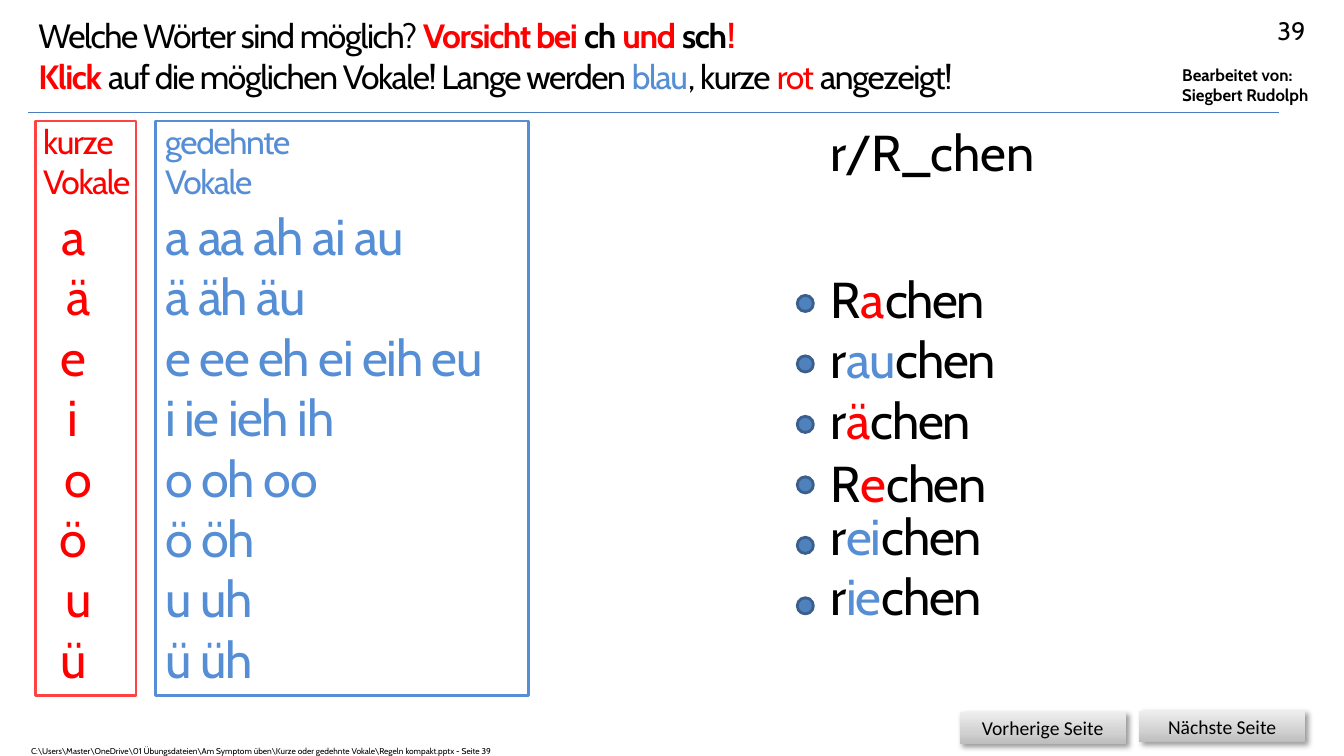
from dataclasses import dataclass
from typing import NamedTuple, Optional, Sequence

from pptx import Presentation
from pptx import util as u
from pptx.dml import color as dml
from pptx.enum import shapes, text
from pptx.oxml import ns, parse_xml


@dataclass(frozen=True)
class Theme:
    font: str = "Cabin"
    button_font: str = "Calibri"
    ink: str = "000000"
    short: str = "FF0000"
    long: str = "558ED5"
    short_frame: str = "FF4343"
    rule: str = "4B7EBC"
    dot: str = "4F81BD"
    dot_edge: str = "3A5F8C"
    button_stops: tuple = ((0, "BDBDBD"), (35, "D1D1D1"), (100, "EEEEEE"))
    vowel_size: float = 36
    heading_size: float = 24
    page_size: float = 18
    button_size: float = 14
    credit_size: float = 12
    footer_size: float = 6


THEME = Theme()


class Box(NamedTuple):
    left: float
    top: float
    width: float
    height: float

    def lengths(self) -> list:
        return [u.Pt(value) for value in self]


class Part(NamedTuple):
    text: str
    color: str = THEME.ink
    bold: bool = False


class Word(NamedTuple):
    onset: str
    vowel: str
    color: str
    nudge: float = 0


class Frame(NamedTuple):
    box: Box
    color: str


class Button(NamedTuple):
    label: str
    box: Box


WORDS = (
    Word("R", "a", THEME.short),
    Word("r", "au", THEME.long),
    Word("r", "ä", THEME.short),
    Word("R", "e", THEME.short, 2.2),
    Word("r", "ei", THEME.long, -3.6),
    Word("r", "ie", THEME.long, -3.6),
)
FRAMES = (
    Frame(Box(25.2, 86.4, 72, 410.4), THEME.short_frame),
    Frame(Box(110.9, 86.4, 266.4, 410.4), THEME.long),
)
BUTTONS = (
    Button("Vorherige Seite", Box(685.4, 508.3, 118.8, 23)),
    Button("Nächste Seite", Box(813.6, 507.6, 118.8, 22.3)),
)
TASK = (
    (Part("Welche Wörter sind möglich? "), Part("Vorsicht bei ", THEME.short, True),
     Part("ch", bold=True), Part(" und ", THEME.short, True),
     Part("sch", bold=True), Part("!", THEME.short, True)),
    (Part("Klick ", THEME.short, True), Part("auf die möglichen Vokale! Lange werden "),
     Part("blau", THEME.long), Part(", kurze "), Part("rot", THEME.short),
     Part(" angezeigt!")),
)
SHORT_VOWELS = ("a ", "ä", "e ", "i ", "o", "ö ", "u", "ü ")
LONG_VOWELS = ("a aa ah ai au", "ä äh äu", "e ee eh ei eih eu", "i ie ieh ih",
               "o oh oo", "ö öh", "u uh", "ü üh")
FILE_LINE = (r"C:\Users\Master\OneDrive\01 Übungsdateien\Am Symptom üben"
             r"\Kurze oder gedehnte Vokale\Regeln kompakt.pptx - Seite 39")
ROW_PITCH = 43.2
FIRST_WORD_TOP = 187.9
FIRST_DOT_TOP = 211


def rgb(value: str) -> dml.RGBColor:
    return dml.RGBColor.from_string(value)


def lines(*texts: str, color: str = THEME.ink, bold: bool = False) -> list:
    return [(Part(line, color, bold),) for line in texts]


def write(holder, paragraphs: Sequence, *, size: float, font: str = THEME.font,
          align=text.PP_ALIGN.LEFT, anchor=text.MSO_ANCHOR.TOP,
          spacing: Optional[float] = None) -> None:
    frame = holder.text_frame
    frame.word_wrap = True
    frame.auto_size = text.MSO_AUTO_SIZE.NONE
    frame.vertical_anchor = anchor
    for number, parts in enumerate(paragraphs):
        paragraph = frame.add_paragraph() if number else frame.paragraphs[0]
        paragraph.alignment = align
        if holder.is_placeholder:
            paragraph.space_before = u.Pt(0)
            properties = paragraph._p.get_or_add_pPr()
            properties.set("marL", "0")
            properties.set("indent", "0")
            properties.append(parse_xml(f"<a:buNone {ns.nsdecls('a')}/>"))
        for part in parts:
            run = paragraph.add_run()
            run.text = part.text
            run.font.name = font
            run.font.size = u.Pt(size)
            run.font.bold = part.bold
            run.font.color.rgb = rgb(part.color)
            if spacing is not None:
                run._r.get_or_add_rPr().set("spc", str(round(spacing * 100)))


def label(slide, box: Box, paragraphs: Sequence, **text_format) -> None:
    write(slide.shapes.add_textbox(*box.lengths()), paragraphs, **text_format)


def fill_placeholder(placeholder, box: Box, paragraphs: Sequence, **text_format) -> None:
    placeholder.left, placeholder.top, placeholder.width, placeholder.height = box.lengths()
    write(placeholder, paragraphs, **text_format)


def outline(slide, kind, box: Box, edge: str, inside: Optional[str] = None) -> None:
    figure = slide.shapes.add_shape(kind, *box.lengths())
    figure.shadow.inherit = False
    figure.line.color.rgb = rgb(edge)
    figure.line.width = u.Pt(2)
    if inside:
        figure.fill.solid()
        figure.fill.fore_color.rgb = rgb(inside)
    else:
        figure.fill.background()


def draw_button(slide, button: Button) -> None:
    key = slide.shapes.add_shape(shapes.MSO_SHAPE.RECTANGLE, *button.box.lengths())
    key.line.fill.background()
    key.shadow.inherit = False
    stops = "".join(f'<a:gs pos="{at * 1000}"><a:srgbClr val="{tone}"/></a:gs>'
                    for at, tone in THEME.button_stops)
    properties = key.element.spPr
    properties.find(ns.qn("a:ln")).addprevious(parse_xml(
        f'<a:gradFill {ns.nsdecls("a")} rotWithShape="1"><a:gsLst>{stops}</a:gsLst>'
        '<a:lin ang="16200000" scaled="0"/></a:gradFill>'))
    properties.find(ns.qn("a:effectLst")).append(parse_xml(
        f'<a:outerShdw {ns.nsdecls("a")} blurRad="{u.Pt(4)}" dist="{u.Pt(3)}" '
        'dir="2700000" algn="tl" rotWithShape="0"><a:srgbClr val="000000">'
        '<a:alpha val="40000"/></a:srgbClr></a:outerShdw>'))
    write(key, lines(button.label), size=THEME.button_size, font=THEME.button_font,
          align=text.PP_ALIGN.CENTER, anchor=text.MSO_ANCHOR.MIDDLE)


def draw_rule(slide) -> None:
    rule = slide.shapes.add_connector(shapes.MSO_CONNECTOR.STRAIGHT, u.Pt(20.2),
                                      u.Pt(80.6), u.Pt(913.7), u.Pt(80.6))
    rule.line.color.rgb = rgb(THEME.rule)
    rule.line.width = u.Pt(0.75)
    rule.element.spPr.append(parse_xml(f"<a:effectLst {ns.nsdecls('a')}/>"))


def draw_word(slide, row: int, word: Word) -> None:
    top = FIRST_WORD_TOP + row * ROW_PITCH + word.nudge
    parts = (Part(word.onset), Part(word.vowel, word.color), Part("chen"))
    label(slide, Box(586.1, top, 180, 51.1), [parts], size=THEME.vowel_size, spacing=-1)
    outline(slide, shapes.MSO_SHAPE.OVAL,
            Box(569.5, FIRST_DOT_TOP + row * ROW_PITCH, 11.5, 11.5),
            THEME.dot_edge, THEME.dot)


def main() -> None:
    deck = Presentation()
    deck.slide_width, deck.slide_height = u.Pt(960), u.Pt(540)
    slide = deck.slides.add_slide(deck.slide_layouts[3])
    task, short_list, long_list = slide.placeholders

    draw_rule(slide)
    fill_placeholder(task, Box(20.2, 7.2, 822.2, 65.5), TASK,
                     size=THEME.heading_size, spacing=-1)
    fill_placeholder(short_list, Box(34.6, 142.6, 42.5, 356.4),
                     lines(*SHORT_VOWELS, color=THEME.short), size=THEME.vowel_size,
                     align=text.PP_ALIGN.CENTER, spacing=-1)
    fill_placeholder(long_list, Box(110.9, 142.6, 280.8, 356.4),
                     lines(*LONG_VOWELS, color=THEME.long),
                     size=THEME.vowel_size, spacing=-1)
    label(slide, Box(23.8, 82.8, 89.3, 65.5), lines("kurze", "Vokale", color=THEME.short),
          size=THEME.heading_size, spacing=-1)
    label(slide, Box(110.9, 82.8, 122.4, 65.5), lines("gedehnte", "Vokale", color=THEME.long),
          size=THEME.heading_size, spacing=-1)
    for frame in FRAMES:
        outline(slide, shapes.MSO_SHAPE.RECTANGLE, frame.box, frame.color)

    label(slide, Box(586.1, 82.8, 180, 51.1), lines("r/R_chen"), size=THEME.vowel_size)
    for row, word in enumerate(WORDS):
        draw_word(slide, row, word)

    label(slide, Box(723.6, 7.2, 216, 28.8), lines("39"), size=THEME.page_size,
          align=text.PP_ALIGN.RIGHT)
    label(slide, Box(837.4, 42.5, 115.2, 36), lines("Bearbeitet von:", "Siegbert Rudolph",
          bold=True), size=THEME.credit_size)
    for button in BUTTONS:
        draw_button(slide, button)
    label(slide, Box(15.1, 529.2, 352.8, 14.4), lines(FILE_LINE), size=THEME.footer_size)
    deck.save("out.pptx")


if __name__ == "__main__":
    main()
